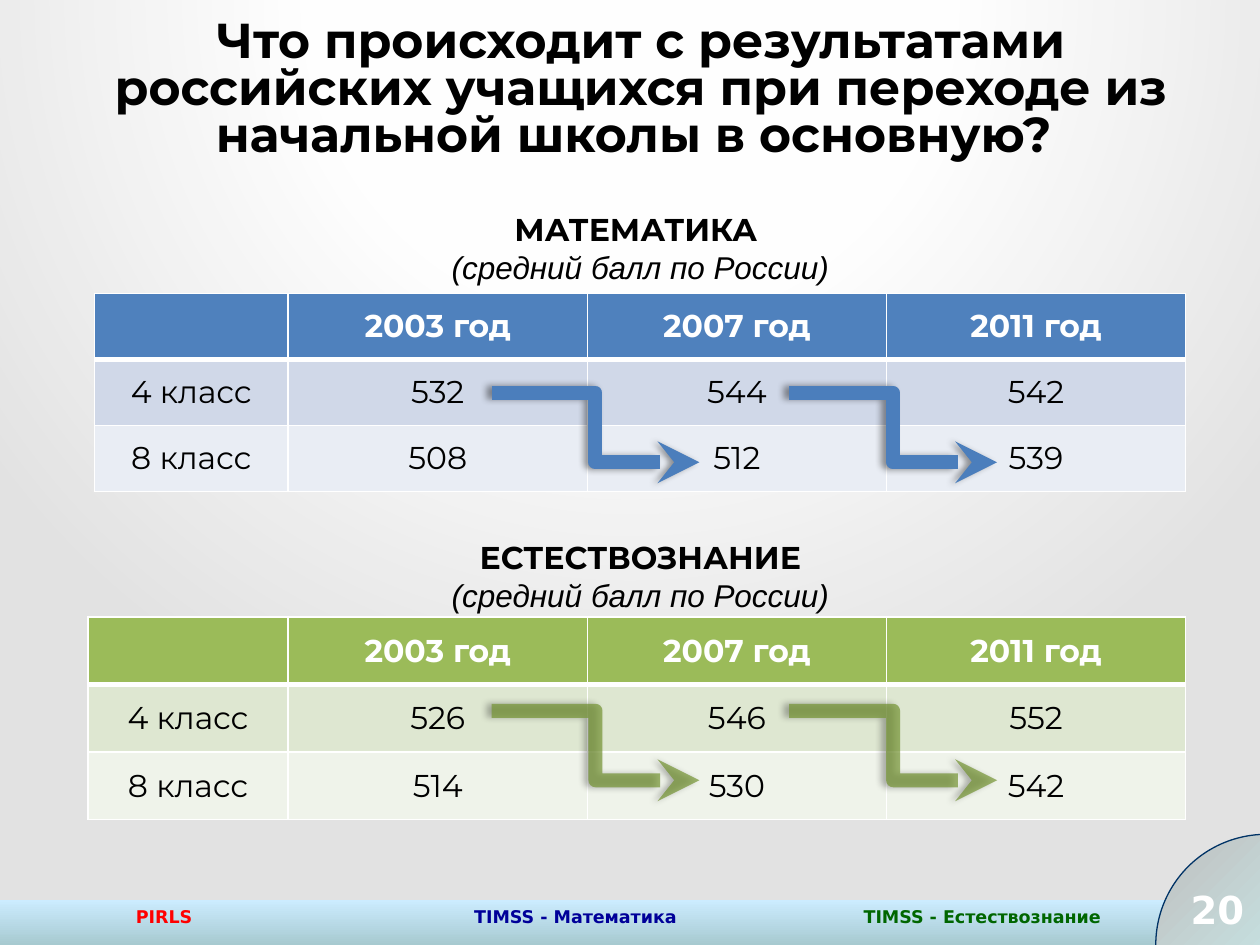
from dataclasses import dataclass

from pptx import Presentation
from pptx.dml.color import RGBColor
from pptx.enum.shapes import MSO_CONNECTOR as Connector, MSO_SHAPE as Shape
from pptx.enum.text import MSO_ANCHOR as Anchor, MSO_AUTO_SIZE as AutoSize, PP_ALIGN as Align
from pptx.oxml import parse_xml
from pptx.oxml.ns import nsdecls, qn
from pptx.util import Cm, Pt


@dataclass(frozen=True)
class Theme:
    heading: str = "Montserrat"
    note: str = "Arial"
    footer: str = "DejaVu Sans"
    title_size: int = 28
    body_size: int = 18
    number_size: int = 22
    footer_size: int = 10
    black: str = "000000"
    white: str = "FFFFFF"
    pirls: str = "FF0000"
    maths: str = "000099"
    science: str = "006600"
    band: tuple = ("CCECFF", "92B6B6")
    badge: tuple = ("BFBFBF", "CCFFFF")
    badge_line: str = "003366"
    blue_rows: tuple = ("4F81BD", "D0D8E8", "E9EDF4")
    green_rows: tuple = ("9BBB59", "DEE7D1", "EFF3EA")
    blue_arrow: str = "4B7EBC"
    green_arrow: str = "769535"


theme = Theme()


def write(paragraph, text, font=theme.heading, size=theme.body_size, color=theme.black,
          bold=False, italic=False, align=Align.CENTER):
    paragraph.alignment = align
    run = paragraph.add_run()
    run.text = text
    run.font.name = font
    run.font.size = Pt(size)
    run.font.bold = bold
    run.font.italic = italic
    run.font.color.rgb = RGBColor.from_string(color)


def shade(shape, colors, angle):
    shape.shadow.inherit = False
    shape.fill.gradient()
    shape.fill.gradient_angle = 360 - angle
    for stop, color in zip(shape.fill.gradient_stops, colors):
        stop.color.rgb = RGBColor.from_string(color)


deck = Presentation()
deck.slide_width, deck.slide_height = Cm(25.4), Cm(19.05)
slide = deck.slides.add_slide(deck.slide_layouts[5])
shapes = slide.shapes
title = shapes.title

slide.background.fill.gradient()
backdrop = slide.background._cSld.find(".//" + qn("a:gradFill"))
backdrop.getparent().replace(backdrop, parse_xml(
    f'<a:gradFill {nsdecls("a")} rotWithShape="1"><a:gsLst>'
    '<a:gs pos="0"><a:srgbClr val="FFFFFF"/></a:gs>'
    '<a:gs pos="40000"><a:srgbClr val="FEFEFE"/></a:gs>'
    '<a:gs pos="100000"><a:srgbClr val="7F7F7F"/></a:gs></a:gsLst>'
    '<a:path path="circle"><a:fillToRect l="50000" t="-80000" r="50000" b="180000"/></a:path>'
    '</a:gradFill>'))

band = shapes.add_shape(Shape.RECTANGLE, 0, Cm(18.14), Cm(25.3), Cm(1.4))
shade(band, theme.band, 90)
band.line.fill.background()

veil = shapes.add_shape(Shape.RECTANGLE, 0, 0, Cm(25.4), Cm(18.14))
veil.shadow.inherit = False
veil.line.fill.background()
veil.fill.solid()
veil.fill.fore_color.rgb = RGBColor.from_string(theme.white)
veil_color = veil._element.spPr.find(qn("a:solidFill"))[0]
veil_color.append(parse_xml(f'<a:alpha {nsdecls("a")} val="78000"/>'))

badge = shapes.add_shape(Shape.OVAL, Cm(23.3), Cm(16.82), Cm(4.45), Cm(4.45))
shade(badge, theme.badge, 45)
badge.line.color.rgb = RGBColor.from_string(theme.badge_line)
badge.line.width = Pt(0.75)

for text, left, top, width, size, color, align in (
    ("PIRLS", 2.49, 18.14, 2.01, theme.footer_size, theme.pirls, Align.LEFT),
    ("TIMSS - Математика", 7.7, 18.14, 7.8, theme.footer_size, theme.maths, Align.CENTER),
    ("TIMSS - Естествознание", 15.9, 18.14, 7.8, theme.footer_size, theme.science, Align.CENTER),
    ("20", 23.3, 17.73, 2.03, theme.number_size, theme.white, Align.RIGHT),
):
    label = shapes.add_textbox(Cm(left), Cm(top), Cm(width), Cm(1.19)).text_frame
    label.word_wrap = True
    write(label.paragraphs[0], text, font=theme.footer, size=size, color=color,
          bold=True, align=align)

title.left, title.top, title.width, title.height = Cm(0.89), Cm(0.74), Cm(24.05), Cm(2.21)
title.text_frame.auto_size = AutoSize.NONE
title.text_frame.word_wrap = True
title.text_frame.vertical_anchor = Anchor.MIDDLE
question = title.text_frame.paragraphs[0]
question.line_spacing = 0.8
write(question, "Что происходит с результатами российских учащихся при переходе из "
      "начальной школы в основную? ", size=theme.title_size, bold=True)
shapes._spTree.append(title._element)

years = ("", "2003 год", "2007 год", "2011 год")
right_edge, year_width = 23.9, 6.03
subjects = (
    ("МАТЕМАТИКА ", 4.11, 5.92, 3.91, 1.33, theme.blue_rows,
     ("4 класс", "532", "544", "542"), ("8 класс", "508", "512", "539"),
     7.92, theme.blue_arrow, 100),
    ("ЕСТЕСТВОЗНАНИЕ", 10.72, 12.44, 4.04, 1.36, theme.green_rows,
     ("4 класс", "526", "546", "552"), ("8 класс", "514", "530", "542"),
     14.33, theme.green_arrow, 71),
)

for (subject, caption_top, table_top, grade_width, row_height, row_fills,
     grade_4, grade_8, arrow_top, arrow_color, opacity) in subjects:
    caption = shapes.add_textbox(Cm(1.91), Cm(caption_top), Cm(22), Cm(1.8)).text_frame
    caption.word_wrap = True
    heading = caption.paragraphs[0]
    write(heading, subject, bold=True)
    heading.add_line_break()
    write(heading, "(средний балл по России)", font=theme.note, italic=True)

    widths = (grade_width, year_width, year_width, year_width)
    total = sum(widths)
    scores = shapes.add_table(3, 4, Cm(right_edge - total), Cm(table_top),
                              Cm(total), Cm(3 * row_height)).table
    for column, width in zip(scores.columns, widths):
        column.width = Cm(width)
    for r, (values, fill) in enumerate(zip((years, grade_4, grade_8), row_fills)):
        scores.rows[r].height = Cm(row_height)
        for c, value in enumerate(values):
            cell = scores.cell(r, c)
            cell.vertical_anchor = Anchor.MIDDLE
            cell.fill.solid()
            cell.fill.fore_color.rgb = RGBColor.from_string(fill)
            if value:
                write(cell.text_frame.paragraphs[0], value, bold=r == 0,
                      color=theme.white if r == 0 else theme.black)
            for place, side in enumerate("LRTB"):
                thick = (r, side) in ((0, "B"), (1, "T"))
                cell._tc.tcPr.insert(place, parse_xml(
                    f'<a:ln{side} {nsdecls("a")} w="{Pt(3 if thick else 1)}"><a:solidFill>'
                    f'<a:srgbClr val="{theme.white}"/></a:solidFill></a:ln{side}>'))

    for step in range(2):
        start = 9.91 + 6 * step
        arrow = shapes.add_connector(Connector.ELBOW, Cm(start), Cm(arrow_top),
                                     Cm(start + 4.19), Cm(arrow_top + 1.4))
        arrow.line.color.rgb = RGBColor.from_string(arrow_color)
        arrow.line.width = Pt(8)
        stroke = arrow.line._get_or_add_ln()
        stroke.find(qn("a:solidFill"))[0].append(
            parse_xml(f'<a:alpha {nsdecls("a")} val="{opacity * 1000}"/>'))
        stroke.append(parse_xml(f'<a:tailEnd {nsdecls("a")} type="stealth"/>'))
        arrow._element.spPr.append(parse_xml(
            f'<a:effectLst {nsdecls("a")}><a:outerShdw blurRad="{Pt(4)}" dist="{Pt(3)}" '
            f'dir="10800000" rotWithShape="0"><a:srgbClr val="{theme.black}">'
            '<a:alpha val="40000"/></a:srgbClr></a:outerShdw></a:effectLst>'))

deck.save("out.pptx")
